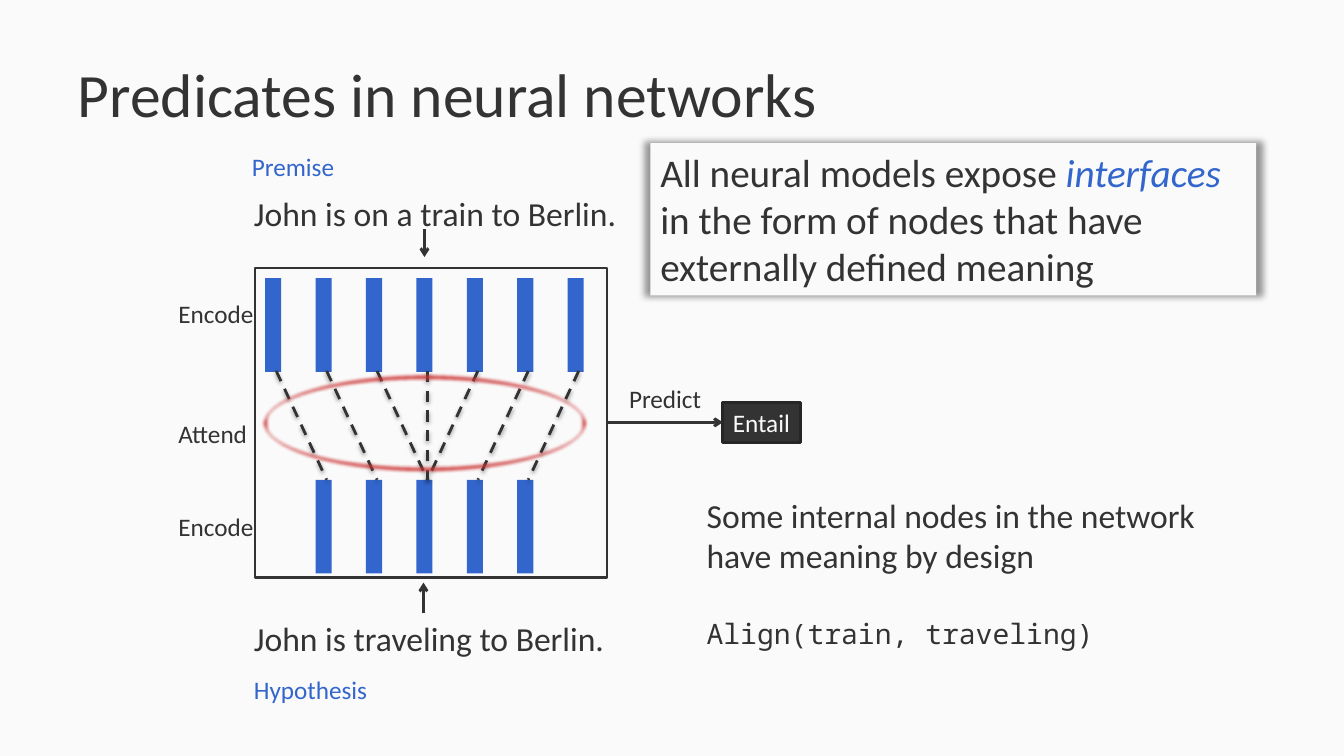
import pptx
import pptx.util
import pptx.dml.color
import pptx.enum.dml
import pptx.enum.shapes
import pptx.enum.text
import pptx.oxml
import pptx.oxml.ns
from pptx.util import Inches

COLORS = {"paper": "FAFAFA", "ink": "333333", "edge": "262626",
          "blue": "3366CC", "red": "CC3333", "black": "000000"}
SHAPES = pptx.enum.shapes.MSO_SHAPE
ANCHORS = pptx.enum.text.MSO_ANCHOR


def rgb(name):
    return pptx.dml.color.RGBColor.from_string(COLORS[name])


def add_run(paragraph, text, size=18, color="ink", font="Calibri", italic=False):
    run = paragraph.add_run()
    run.text = text
    run.font.size = pptx.util.Pt(size)
    run.font.name = font
    run.font.italic = italic
    run.font.color.rgb = rgb(color)


def xml_element(markup):
    namespace = pptx.oxml.ns.nsdecls("a")
    tag, rest = markup.split(" ", 1)
    return pptx.oxml.parse_xml(f"{tag} {namespace} {rest}")


def shadow_xml(blur, distance, angle, alpha, scale=100):
    return (f'<a:outerShdw blurRad="{int(blur * 12700)}" dist="{int(distance * 12700)}" '
            f'dir="{angle * 60000}" sx="{scale * 1000}" sy="{scale * 1000}" algn="ctr" '
            f'rotWithShape="0"><a:srgbClr val="{COLORS["black"]}">'
            f'<a:alpha val="{alpha * 1000}"/></a:srgbClr></a:outerShdw>')


class Deck:
    def __init__(self):
        self.presentation = pptx.Presentation()
        self.presentation.slide_width = Inches(13.33)
        self.presentation.slide_height = Inches(7.5)
        self.slide = self.presentation.slides.add_slide(self.presentation.slide_layouts[5])
        background = self.slide.background.fill
        background.solid()
        background.fore_color.rgb = rgb("paper")

    def title(self, text, box):
        title = self.slide.shapes.title
        title.left, title.top, title.width, title.height = map(Inches, box)
        title.text_frame.vertical_anchor = ANCHORS.MIDDLE
        paragraph = title.text_frame.paragraphs[0]
        paragraph.alignment = pptx.enum.text.PP_ALIGN.LEFT
        add_run(paragraph, text, size=44)

    def fill_frame(self, frame, runs, wrap):
        frame.word_wrap = wrap
        frame.vertical_anchor = ANCHORS.TOP
        paragraph = frame.paragraphs[0]
        paragraph.alignment = pptx.enum.text.PP_ALIGN.LEFT
        for text, style in runs:
            add_run(paragraph, text, **style)

    def text(self, text, box, wrap=False, **style):
        label = self.slide.shapes.add_textbox(*map(Inches, box))
        self.fill_frame(label.text_frame, [(text, style)], wrap)
        return label.text_frame

    def shape(self, kind, box, fill=None, line=None, width=2, effect=None, runs=(), wrap=False):
        shape = self.slide.shapes.add_shape(kind, *map(Inches, box))
        if fill:
            shape.fill.solid()
            shape.fill.fore_color.rgb = rgb(fill)
        else:
            shape.fill.background()
        if line:
            shape.line.color.rgb = rgb(line)
            shape.line.width = pptx.util.Pt(width)
        else:
            shape.line.fill.background()
        shape.shadow.inherit = False
        if effect:
            effects = shape._element.spPr.find(pptx.oxml.ns.qn("a:effectLst"))
            effects.append(xml_element(effect))
        if runs:
            self.fill_frame(shape.text_frame, runs, wrap)

    def line(self, start, end, arrow=False, dashed=False, effect=""):
        connector = self.slide.shapes.add_connector(
            pptx.enum.shapes.MSO_CONNECTOR.STRAIGHT, *map(Inches, start + end))
        connector.line.color.rgb = rgb("ink")
        connector.line.width = pptx.util.Pt(2)
        if dashed:
            connector.line.dash_style = pptx.enum.dml.MSO_LINE.DASH
        if arrow:
            connector.line._get_or_add_ln().append(xml_element('<a:tailEnd type="arrow"/>'))
        connector._element.spPr.append(xml_element(f"<a:effectLst >{effect}</a:effectLst>"))


def main():
    deck = Deck()
    deck.title("Predicates in neural networks", (0.67, 0.3, 12, 1.25))

    deck.shape(SHAPES.RECTANGLE, (2.53, 2.66, 3.49, 3.07), "paper", "ink")
    deck.shape(SHAPES.RECTANGLE, (7.17, 3.99, 0.77, 0.4), "ink", "edge",
               runs=[("Entail", {"color": "paper"})])

    for text, left, top, width, color in [
            ("Premise", 2.4, 1.45, 1.03, "blue"), ("Hypothesis", 2.42, 6.64, 1.34, "blue"),
            ("Predict", 6.14, 3.75, 0.92, "ink"), ("Encode", 1.67, 2.91, 0.95, "ink"),
            ("Attend", 1.67, 4.1, 0.91, "ink"), ("Encode", 1.67, 5.02, 0.95, "ink")]:
        deck.text(text, (left, top, width, 0.4), color=color)
    deck.text("John is on a train to Berlin.", (2.42, 1.86, 4.19, 0.5), wrap=True, size=24)
    deck.text("John is traveling to Berlin.", (2.42, 6.08, 4.09, 0.5), wrap=True, size=24)

    pitch = 0.5
    for first_left, top, count in [(2.63, 2.76, 7), (3.13, 4.76, 5)]:
        for index in range(count):
            deck.shape(SHAPES.RECTANGLE, (first_left + index * pitch, top, 0.16, 0.93), "blue")

    for start, end in [((6.02, 4.19), (7.17, 4.19)), ((4.21, 2.27), (4.21, 2.55)),
                       ((4.2, 6.08), (4.2, 5.78))]:
        deck.line(start, end, arrow=True)

    aligned_hypothesis_nodes = [0, 1, 2, 2, 2, 3, 4]
    for premise_node, hypothesis_node in enumerate(aligned_hypothesis_nodes):
        deck.line((2.74 + premise_node * pitch, 3.68), (3.24 + hypothesis_node * pitch, 4.76),
                  dashed=True, effect=shadow_xml(3.1, 1.6, 90, 38))

    deck.shape(SHAPES.OVAL, (2.63, 3.75, 3.16, 0.9), line="red", width=7,
               effect='<a:softEdge rad="31750"/>')

    meaning = deck.text("Some internal nodes in the network have meaning by design",
                        (6.91, 4.86, 5.59, 1.65), wrap=True, size=24)
    predicate = meaning.add_paragraph()
    predicate.space_before = pptx.util.Pt(29)
    add_run(predicate, "Align(train, traveling)", size=20, font="Noto Sans Mono")

    deck.shape(SHAPES.RECTANGLE, (6.45, 1.42, 6.01, 1.51), "paper", wrap=True,
               effect=shadow_xml(5, 0, 0, 40, scale=102),
               runs=[("All neural models expose ", {"size": 28}),
                     ("interfaces ", {"size": 28, "color": "blue", "italic": True}),
                     ("in the form of nodes that have externally defined meaning", {"size": 28})])

    deck.presentation.save("out.pptx")


if __name__ == "__main__":
    main()
